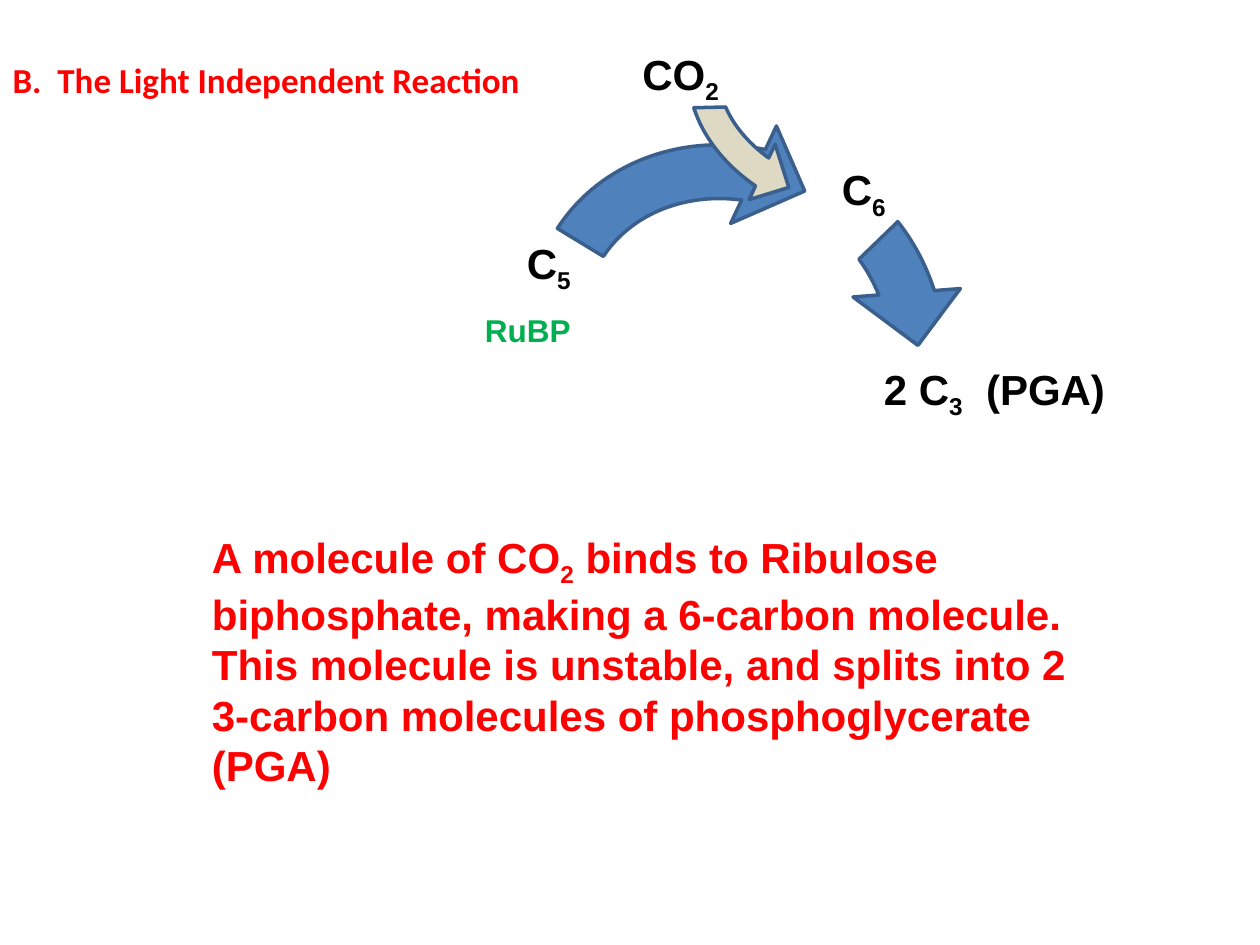
from pptx import Presentation
from pptx.dml.color import RGBColor
from pptx.enum.shapes import MSO_SHAPE
from pptx.enum.text import MSO_ANCHOR, MSO_AUTO_SIZE, PP_ALIGN
from pptx.util import Inches, Pt

COLORS = {
    "red": "FF0000",
    "green": "00B050",
    "black": "000000",
    "blue": "4F81BD",
    "beige": "DDD9C3",
    "outline": "3A5F8C",
}
CELLS_PER_INCH = 12  # the slide is a grid of 120 columns by 90 rows


def color(name):
    return RGBColor.from_string(COLORS[name])


def grid(*cells):
    """Turn columns and rows into lengths."""
    return [Inches(cell / CELLS_PER_INCH) for cell in cells]


def format_run(run, size, color_name, font="Arial"):
    run.font.name = font
    run.font.size = Pt(size)
    run.font.bold = True
    run.font.color.rgb = color(color_name)


def add_heading(slide, text, place):
    heading = slide.shapes.title
    heading.left, heading.top, heading.width, heading.height = grid(*place)
    frame = heading.text_frame
    frame.text = text
    frame.word_wrap = True
    frame.auto_size = MSO_AUTO_SIZE.NONE
    frame.vertical_anchor = MSO_ANCHOR.TOP
    paragraph = frame.paragraphs[0]
    paragraph.alignment = PP_ALIGN.LEFT
    properties = paragraph._p.get_or_add_pPr()
    hanging = Inches(0.44)
    properties.set("marL", str(hanging))
    properties.set("indent", str(-hanging))
    format_run(paragraph.runs[0], 20, "red", "Calibri")


def add_formula_text(slide, parts, place, color_name="black", size=24):
    """Add a text box in which every second part is a subscript."""
    frame = slide.shapes.add_textbox(*grid(*place)).text_frame
    frame.word_wrap = True
    paragraph = frame.paragraphs[0]
    for index, part in enumerate(parts):
        run = paragraph.add_run()
        run.text = part
        format_run(run, size, color_name)
        if index % 2:
            run._r.get_or_add_rPr().set("baseline", "-25000")


def add_cycle_arrow(slide, place, rotation, tail_angle, fill, mirrored=False):
    arrow = slide.shapes.add_shape(MSO_SHAPE.CIRCULAR_ARROW, *grid(*place))
    arrow.rotation = rotation
    for index, value in enumerate((0.125, 11.423, 204.577, tail_angle, 0.125)):
        arrow.adjustments[index] = value
    if mirrored:
        arrow._element.spPr.get_or_add_xfrm().set("flipH", "1")
    arrow.fill.solid()
    arrow.fill.fore_color.rgb = color(fill)
    arrow.line.color.rgb = color("outline")
    arrow.line.width = Pt(2)
    arrow.shadow.inherit = False


def main():
    presentation = Presentation()
    presentation.slide_width, presentation.slide_height = grid(120, 90)
    slide = presentation.slides.add_slide(presentation.slide_layouts[5])

    add_heading(slide, "B.  The Light Independent Reaction", (0, 5, 105, 8.9))

    # Starting molecule
    add_formula_text(slide, ["C", "5"], (49, 22, 23, 6.1))
    add_formula_text(slide, ["RuBP"], (45, 29, 20, 4.8), "green", 18)

    # Carbon dioxide joins the five-carbon molecule
    add_cycle_arrow(slide, (49.6, 9.6, 41, 45), 295.2, 165.667, "blue")
    add_cycle_arrow(slide, (67.2, -5.3, 23.3, 30.5), 295.2, 177.986, "beige",
                    mirrored=True)
    add_formula_text(slide, ["CO", "2"], (60, 4, 13, 6.1))
    add_formula_text(slide, ["C", "6"], (79, 15, 17, 6.1))

    # Explanation
    explanation = [
        "A molecule of CO", "2",
        " binds to Ribulose biphosphate, making a 6-carbon molecule.  "
        "This molecule is unstable, and splits into 2 3-carbon molecules "
        "of phosphoglycerate (PGA)",
    ]
    add_formula_text(slide, explanation, (19, 50, 87, 25.4), "red")

    # The six-carbon molecule splits
    add_cycle_arrow(slide, (51.6, 11.6, 41, 45), 355.5, 192.255, "blue")
    add_formula_text(slide, ["2 C", "3", "  (PGA)"], (83, 34, 24, 6.1))

    presentation.save("out.pptx")


if __name__ == "__main__":
    main()
